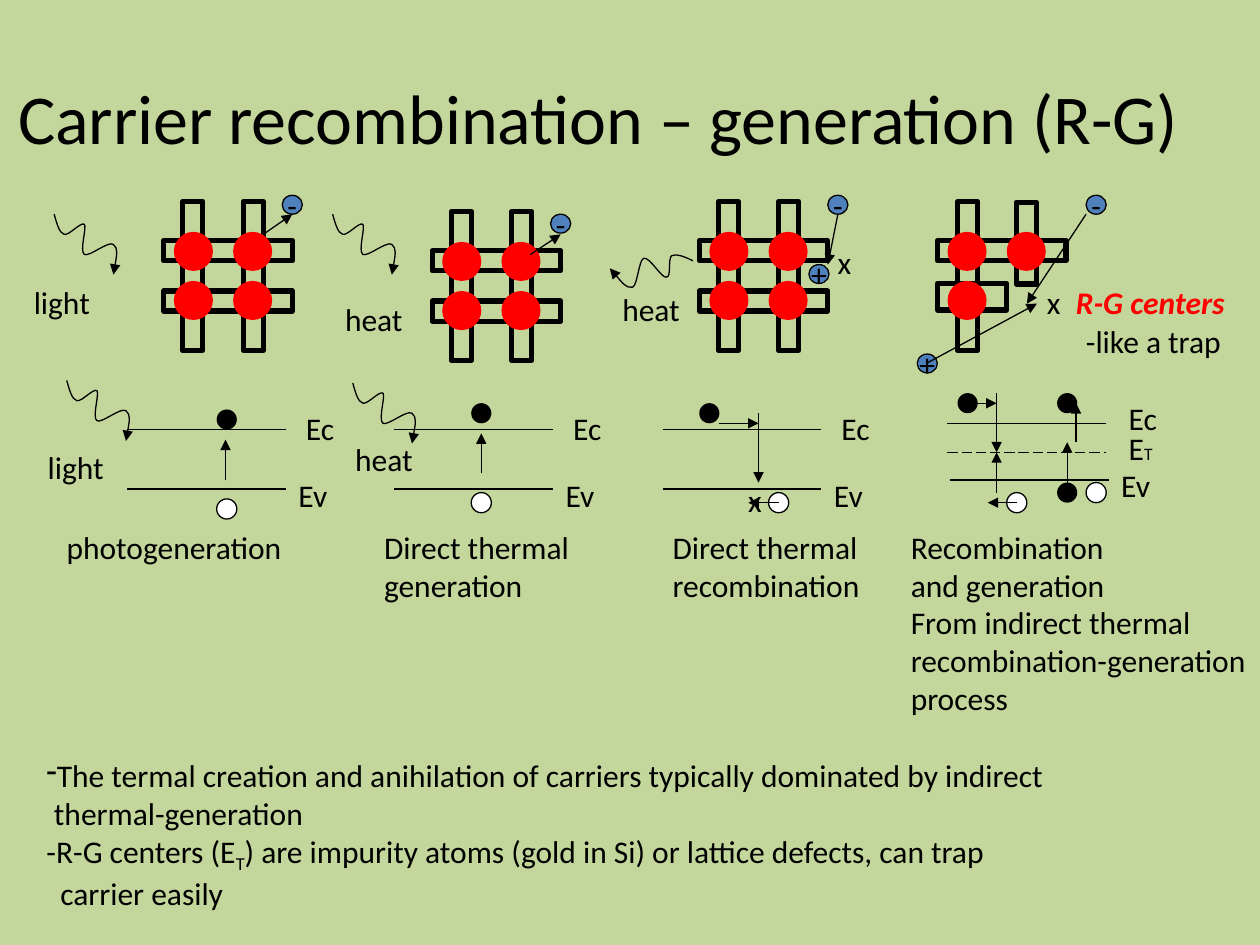
from dataclasses import dataclass
from typing import Optional

from lxml.etree import SubElement
from pptx import Presentation
from pptx.dml.color import RGBColor
from pptx.enum.dml import MSO_LINE as Dash
from pptx.enum.shapes import MSO_CONNECTOR as Link, MSO_SHAPE as Kind
from pptx.enum.text import MSO_ANCHOR as Anchor, MSO_AUTO_SIZE as Auto, PP_ALIGN as Align
from pptx.oxml.ns import qn
from pptx.util import Inches, Pt

BLACK = RGBColor(0, 0, 0)
WHITE = RGBColor(255, 255, 255)
RED = RGBColor(255, 0, 0)
BLUE = RGBColor(0x4F, 0x81, 0xBD)
GREEN = RGBColor(0xC3, 0xD6, 0x9B)
FONT = "Calibri"
COLS, ROWS = 1000, 750
CELL = Inches(10) // COLS


@dataclass
class Label:
    col: int
    row: int
    wide: int
    text: str
    high: int = 40


@dataclass
class Line:
    col: int
    row: int
    to_col: int
    to_row: int
    head: bool = True
    dash: bool = False


@dataclass
class Ball:
    col: int
    row: int
    fill: RGBColor
    edge: bool = False
    sign: str = ""
    wide: int = 16
    high: int = 16


@dataclass
class Bar:
    col: int
    row: int
    wide: int = 102
    high: int = 16
    turn: int = 0


def area(col: int, row: int, wide: int, high: int) -> list:
    return [n * CELL for n in (col, row, wide, high)]


def style(text, size: int = 18, color: RGBColor = BLACK) -> None:
    for para in text.paragraphs:
        for run in para.runs:
            run.font.name = FONT
            run.font.size = Pt(size)
            run.font.color.rgb = color


def write(slide, item: Label, color: RGBColor = BLACK):
    box = slide.shapes.add_textbox(*area(item.col, item.row, item.wide, item.high))
    text = box.text_frame
    text.text = item.text
    text.word_wrap = False
    text.auto_size = Auto.SHAPE_TO_FIT_TEXT
    style(text, color=color)
    return text


def stroke(shape, width: float = 0.75, head: bool = False) -> None:
    shape.line.color.rgb = BLACK
    shape.line.width = Pt(width)
    if head:
        SubElement(shape.line._get_or_add_ln(), qn("a:tailEnd"), type="triangle")


def draw_line(slide, item: Line) -> None:
    ends = area(item.col, item.row, item.to_col, item.to_row)
    link = slide.shapes.add_connector(Link.STRAIGHT, *ends)
    if item.dash:
        link.line.dash_style = Dash.LONG_DASH
    stroke(link, head=item.head)
    SubElement(link._element.spPr, qn("a:effectLst"))


def draw_ball(shapes, item: Ball) -> None:
    ball = shapes.add_shape(Kind.OVAL, *area(item.col, item.row, item.wide, item.high))
    ball.shadow.inherit = False
    ball.fill.solid()
    ball.fill.fore_color.rgb = item.fill
    if item.edge:
        stroke(ball)
    else:
        ball.line.fill.background()
    if item.sign:
        text = ball.text_frame
        text.text = item.sign
        text.word_wrap = False
        text.vertical_anchor = Anchor.MIDDLE
        text.paragraphs[0].alignment = Align.CENTER
        style(text)


def draw_bar(shapes, item: Bar) -> None:
    bar = shapes.add_shape(Kind.RECTANGLE, *area(item.col, item.row, item.wide, item.high))
    bar.shadow.inherit = False
    bar.fill.background()
    bar.rotation = item.turn
    stroke(bar, 3)


def draw_net(shapes, col: int, row: int, bars: list, atoms: list) -> None:
    for bar in bars:
        draw_bar(shapes, Bar(col + bar.col, row + bar.row, bar.wide, bar.high, bar.turn))
    for dx, dy in atoms:
        draw_ball(shapes, Ball(col + dx, row + dy, RED, wide=31, high=31))


def draw_wave(slide, col: int, row: int, steps: list) -> None:
    spots = [((col + dx) * CELL, (row + dy) * CELL) for dx, dy in steps]
    form = slide.shapes.build_freeform(col * CELL, row * CELL)
    form.add_line_segments(spots, close=False)
    wave = form.convert_to_shape()
    wave.shadow.inherit = False
    wave.fill.background()
    stroke(wave, head=True)
    track = next(wave._element.iter(qn("a:path")))
    legs = track.findall(qn("a:lnTo"))
    for i in range(0, len(legs), 3):
        curve = SubElement(track, qn("a:cubicBezTo"))
        for leg in legs[i:i + 3]:
            curve.append(leg[0])
            track.remove(leg)


def draw_notes(slide) -> None:
    text = write(slide, Label(27, 595, 821, "\n".join((
        "The termal creation and anihilation of carriers typically dominated by indirect",
        "thermal-generation", "-R-G centers (E", "carrier easily")), 131))
    first, second, third, last = text.paragraphs
    mark = first._p.get_or_add_pPr()
    mark.set("marL", "0")
    mark.set("indent", "0")
    SubElement(mark, qn("a:buChar"), char="-")
    for para, gap in ((second, 6), (last, 11)):
        para._p.get_or_add_pPr().set("marL", str(gap * CELL))
    low = third.add_run()
    low.text = "T"
    low.font._element.set("baseline", "-25000")
    third.add_run().text = ") are impurity atoms (gold in Si) or lattice defects, can trap"
    style(text)


NET = [Bar(0, 0), Bar(0, 40), Bar(-36, 20, 118, turn=90), Bar(12, 20, 118, turn=90)]
GAP = [Bar(0, 0), Bar(0, 34, 55, 21), Bar(-35, 20, 118, turn=90), Bar(38, -6, 65, turn=90)]
ATOMS = [(8, -7), (8, 32), (55, -7), (55, 32)]
FALL = [(2, 7), (4, 15), (8, 16), (12, 17), (21, 6), (24, 8), (26, 11), (20, 29),
        (24, 32), (28, 34), (43, 21), (47, 24), (51, 27), (49, 37), (47, 48)]
RISE = [(-6, -3), (-13, -6), (-17, -4), (-20, -1), (-17, 13), (-21, 13), (-25, 14),
        (-34, -3), (-39, -2), (-43, -1), (-44, 20), (-48, 21), (-53, 22), (-59, 14), (-66, 6)]
WAVES = [(43, 170, FALL), (264, 170, FALL), (550, 207, RISE), (53, 302, FALL), (280, 304, FALL)]
BANDS = [(101, 101, 341, 388, 320), (313, 313, 341, 388, 320),
         (526, 526, 341, 388, 320), (752, 754, 336, 381, 312)]
SIGNS = [(224, 155, "-"), (437, 170, "-"), (657, 155, "-"),
         (642, 210, "+"), (862, 155, "-"), (728, 281, "+")]
FULL = [(172, 325), (374, 320), (555, 320), (760, 312), (839, 312), (839, 383)]
HOLES = [(172, 396), (374, 391), (610, 391), (799, 391), (862, 383)]
ARROWS = [
    Line(209, 186, 232, 170), Line(421, 202, 445, 186), Line(665, 170, 657, 210),
    Line(862, 170, 815, 241), Line(736, 288, 823, 241), Line(179, 381, 179, 349),
    Line(382, 375, 382, 344), Line(571, 336, 602, 336), Line(602, 328, 602, 383),
    Line(618, 399, 594, 399), Line(760, 320, 791, 320), Line(807, 399, 784, 399),
    Line(791, 312, 791, 359), Line(791, 391, 791, 359), Line(847, 383, 847, 351),
    Line(854, 351, 854, 320), Line(752, 359, 878, 359, False, True)]
LABELS = [
    Label(17, 220, 66, "light"), Label(264, 233, 69, "heat"), Label(484, 225, 69, "heat"),
    Label(28, 351, 66, "light"), Label(272, 344, 69, "heat"),
    Label(584, 377, 33, "x"), Label(655, 188, 33, "x"), Label(821, 220, 33, "x"),
    Label(43, 414, 201, "photogeneration"),
    Label(295, 414, 183, "Direct thermal\ngeneration", 70),
    Label(524, 414, 183, "Direct thermal\nrecombination", 70),
    Label(713, 414, 289, "Recombination\nand generation\nFrom indirect thermal\n"
          "recombination-generation\nprocess", 162),
    Label(852, 251, 137, "-like a trap")]


def main() -> None:
    deck = Presentation()
    deck.slide_width, deck.slide_height = COLS * CELL, ROWS * CELL
    slide = deck.slides.add_slide(deck.slide_layouts[6])
    slide.background.fill.solid()
    slide.background.fill.fore_color.rgb = GREEN

    title = slide.shapes.add_textbox(*area(0, 30, 950, 125)).text_frame
    title.text = "Carrier recombination – generation (R-G)"
    title.word_wrap = True
    title.vertical_anchor = Anchor.MIDDLE
    title.paragraphs[0].alignment = Align.CENTER
    style(title, 40)

    for col, row in ((130, 191), (555, 191), (343, 199)):
        draw_net(slide.shapes.add_group_shape().shapes, col, row, NET, ATOMS)
    draw_net(slide.shapes, 744, 191, GAP, ATOMS[:3])
    for wave in WAVES:
        draw_wave(slide, *wave)
    for top, low, row, base, tag in BANDS:
        draw_line(slide, Line(top, row, top + 126, row, False))
        draw_line(slide, Line(low, base, low + 126, base, False))
        side = 126 if tag == 320 else 128
        write(slide, Label(top + side + 6, tag, 49, "Ec"))
        write(slide, Label(top + side, tag + 53, 49, "Ev"))
    for col, row, sign in SIGNS:
        draw_ball(slide.shapes, Ball(col, row, BLUE, True, sign, high=15))
    for col, row in FULL:
        draw_ball(slide.shapes, Ball(col, row, BLACK))
    for col, row in HOLES:
        draw_ball(slide.shapes, Ball(col, row, WHITE, True))
    for arrow in ARROWS:
        draw_line(slide, arrow)
    for label in LABELS:
        write(slide, label)

    trap = write(slide, Label(886, 336, 45, "E"))
    low = trap.paragraphs[0].add_run()
    low.text = "T"
    style(trap)
    low.font.size = Pt(10)
    font = write(slide, Label(844, 220, 162, "R-G centers"), RED).paragraphs[0].runs[0].font
    font.bold = font.italic = True
    draw_notes(slide)
    deck.save("out.pptx")


if __name__ == "__main__":
    main()
